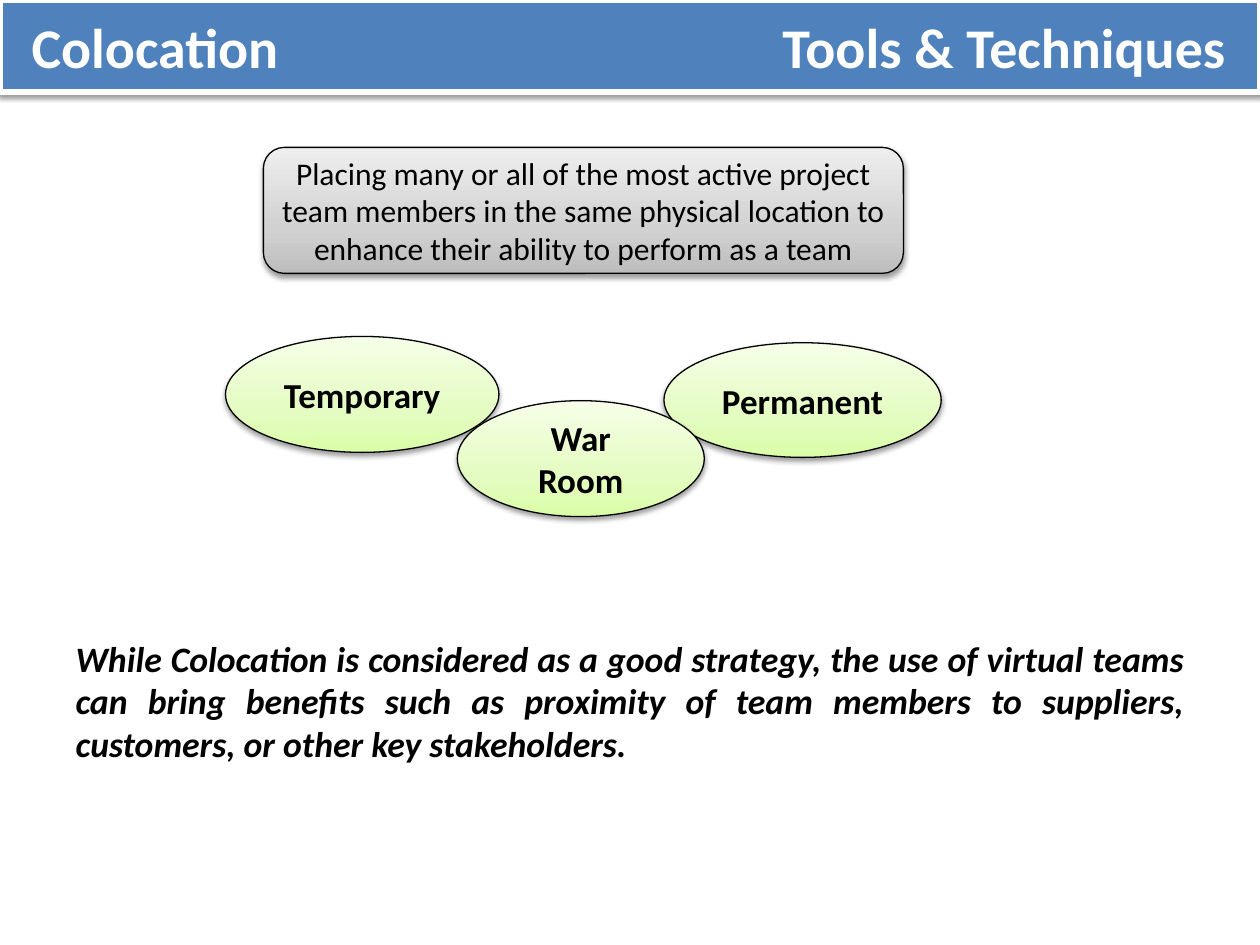
import copy
import pptx
import pptx.util
import pptx.dml.color
import pptx.enum.shapes
import pptx.enum.text
import pptx.oxml
import pptx.oxml.ns

Inches, Pt = pptx.util.Inches, pptx.util.Pt
SHAPE = pptx.enum.shapes.MSO_SHAPE
ALIGN = pptx.enum.text.PP_ALIGN
ANCHOR = pptx.enum.text.MSO_ANCHOR
NS = pptx.oxml.ns.nsdecls("a")

COLORS = {"band": "4F81BD", "white": "FFFFFF", "black": "000000"}
GRADIENTS = {
    "gray": ["BDBDBD", "D1D1D1", "EEEEEE"],
    "green": ["DAFDA7", "E4FCC2", "F5FFE7"],
}
STOPS = [0, 0.35, 1]

TITLE = "Colocation\tTools & Techniques"
DEFINITION = ("Placing many or all of the most active project team members in the same "
              "physical location to enhance their ability to perform as a team")
KINDS = [
    ("Temporary", 1.79, 2.67, 2.17, 0.92),
    ("Permanent", 5.27, 2.72, 2.2, 0.91),
    ("War Room", 3.63, 3.18, 1.96, 0.92),
]
REMARK = ("While Colocation is considered as a good strategy, the use of virtual teams can "
          "bring benefits such as proximity of team members to suppliers, customers, or "
          "other key stakeholders.")


def rgb(value):
    return pptx.dml.color.RGBColor.from_string(value)


def place(s, left, top, width, height):
    s.left, s.top, s.width, s.height = map(Inches, (left, top, width, height))


def write(s, text, size, color, align, bold=False, italic=False):
    tf = s.text_frame
    tf.word_wrap = True
    tf.auto_size = pptx.enum.text.MSO_AUTO_SIZE.NONE
    p = tf.paragraphs[0]
    p.alignment = align
    r = p.add_run()
    r.text = text
    r.font.name, r.font.size = "Calibri", Pt(size)
    r.font.bold, r.font.italic = bold, italic
    r.font.color.rgb = rgb(COLORS[color])
    return p


def outline(s, color, width):
    s.line.color.rgb = rgb(COLORS[color])
    s.line.width = Pt(width)
    s.shadow.inherit = False
    effects = s._element.spPr.find(pptx.oxml.ns.qn("a:effectLst"))
    effects.append(pptx.oxml.parse_xml(
        f'<a:outerShdw {NS} blurRad="{Pt(3.1)}" dist="{Pt(1.6)}" dir="5400000" '
        f'rotWithShape="0"><a:srgbClr val="{COLORS["black"]}">'
        '<a:alpha val="38000"/></a:srgbClr></a:outerShdw>'))


def add_bubble(shapes, kind, box, text, gradient, size, bold=False):
    s = shapes.add_shape(kind, *map(Inches, box))
    s.fill.gradient()
    s.fill.gradient_angle = 90
    first = s._element.spPr.find(".//" + pptx.oxml.ns.qn("a:gs"))
    first.addnext(copy.deepcopy(first))
    for stop, position, color in zip(s.fill.gradient_stops, STOPS, GRADIENTS[gradient]):
        stop.position = position
        stop.color.rgb = rgb(color)
    outline(s, "black", 0.75)
    s.text_frame.vertical_anchor = ANCHOR.MIDDLE
    write(s, text, size, "black", ALIGN.CENTER, bold)


def main():
    prs = pptx.Presentation()
    prs.slide_width, prs.slide_height = Inches(10), Inches(7.5)
    slide = prs.slides.add_slide(prs.slide_layouts[1])
    title, body = slide.placeholders

    place(title, 0, 0, 10, 0.73)
    title.fill.solid()
    title.fill.fore_color.rgb = rgb(COLORS["band"])
    outline(title, "white", 3)
    title.text_frame.vertical_anchor = ANCHOR.MIDDLE
    title.text_frame.margin_left = Inches(0.25)
    p = write(title, TITLE, 32, "white", ALIGN.LEFT, bold=True)
    p._p.get_or_add_pPr().append(pptx.oxml.parse_xml(
        f'<a:tabLst {NS}><a:tab pos="{Inches(9.48)}" algn="r"/></a:tabLst>'))

    add_bubble(slide.shapes, SHAPE.ROUNDED_RECTANGLE, (2.09, 1.17, 5.08, 1),
               DEFINITION, "gray", 18)
    group = slide.shapes.add_group_shape()
    for text, *box in KINDS:
        add_bubble(group.shapes, SHAPE.OVAL, box, text, "green", 20, bold=True)

    place(body, 0.5, 5, 9, 0.92)
    p = write(body, REMARK, 20.4, "black", ALIGN.JUSTIFY, bold=True, italic=True)
    pPr = p._p.get_or_add_pPr()
    pPr.set("marL", "0")
    pPr.set("indent", "0")
    pPr.append(pptx.oxml.parse_xml(f"<a:buNone {NS}/>"))

    prs.save("out.pptx")


if __name__ == "__main__":
    main()
